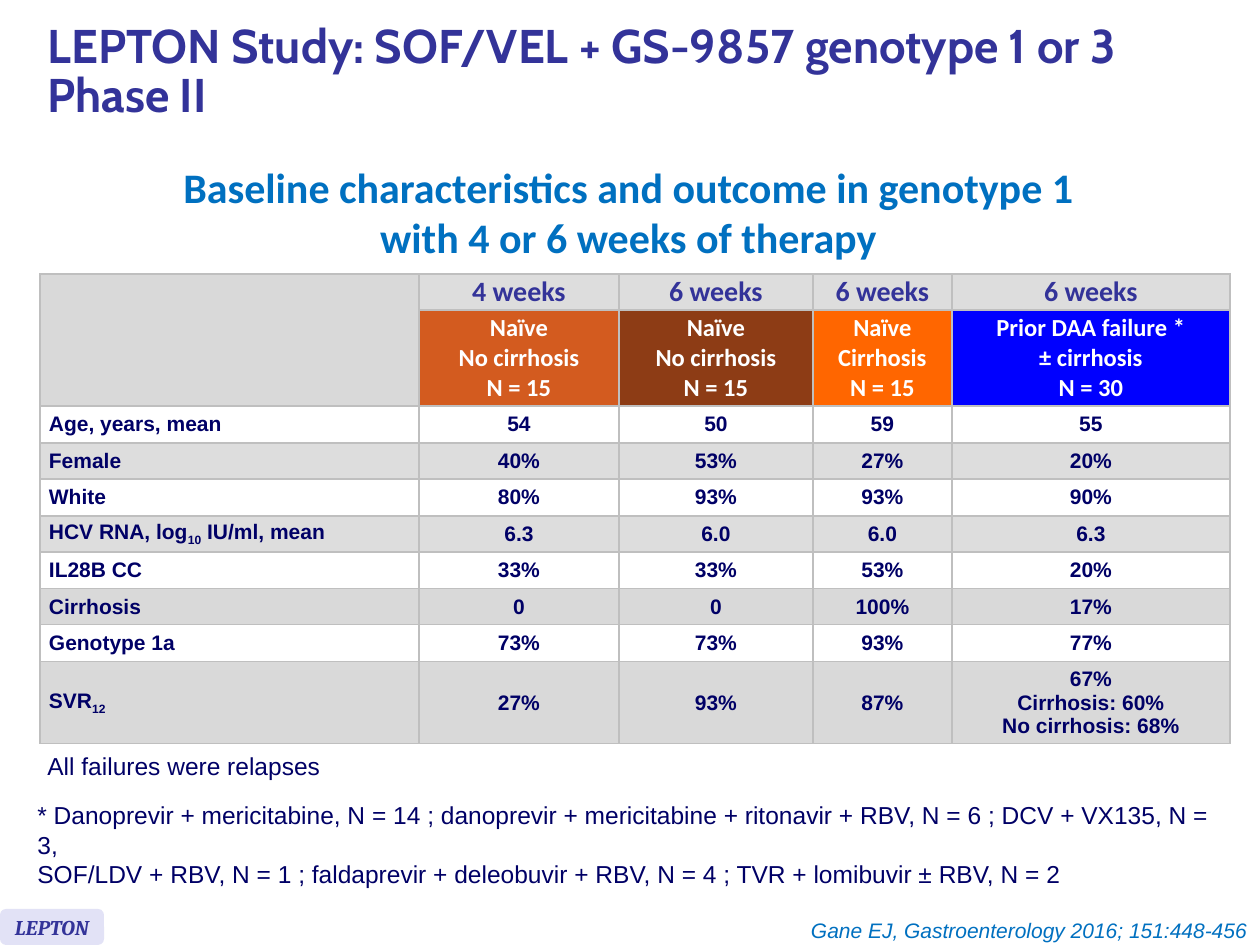
from lxml.etree import SubElement
from pptx import Presentation
from pptx.dml.color import RGBColor
from pptx.enum.shapes import MSO_SHAPE as Shape
from pptx.enum.text import MSO_ANCHOR as Anchor, MSO_AUTO_SIZE as AutoSize, PP_ALIGN as Align
from pptx.oxml.ns import qn
from pptx.util import Pt

EMU_PER_PX = 914400 / 126
COLORS = {
    "indigo": "333399", "navy": "000066", "sky": "0070C0", "white": "FFFFFF",
    "lilac": "E2E2F6", "border": "BFBFBF", "grey": "D9D9D9", "pale": "DDDDDD",
    "rust": "D35B1F", "brown": "8D3C15", "orange": "FF6600", "blue": "0000FF",
}
ARMS = [
    ("4 weeks", ["Naïve", "No cirrhosis", "N = 15"], "rust"),
    ("6 weeks", ["Naïve", "No cirrhosis", "N = 15"], "brown"),
    ("6 weeks", ["Naïve", "Cirrhosis", "N = 15"], "orange"),
    ("6 weeks", ["Prior DAA failure *", "± cirrhosis", "N = 30"], "blue"),
]
# Text between underscores is set as subscript.
CHARACTERISTICS = [
    ("white", "Age, years, mean", "54", "50", "59", "55"),
    ("pale", "Female", "40%", "53%", "27%", "20%"),
    ("white", "White", "80%", "93%", "93%", "90%"),
    ("pale", "HCV RNA, log_10_ IU/ml, mean", "6.3", "6.0", "6.0", "6.3"),
    ("white", "IL28B CC", "33%", "33%", "53%", "20%"),
    ("grey", "Cirrhosis", "0", "0", "100%", "17%"),
    ("white", "Genotype 1a", "73%", "73%", "93%", "77%"),
    ("grey", "SVR_12_", "27%", "93%", "87%", "67%\nCirrhosis: 60%\nNo cirrhosis: 68%"),
]
COLUMN_WIDTHS = [379, 200, 194, 139, 278]
ROW_HEIGHTS = [36, 96, 37, 36, 37, 36, 37, 36, 37, 82]


def px(length):
    return round(length * EMU_PER_PX)


def rgb(color):
    return RGBColor.from_string(COLORS[color])


def write(frame, lines, font, size, color, align=Align.LEFT, bold=False, italic=False):
    """Fill a text frame with one paragraph per line, subscripts between underscores."""
    for index, line in enumerate(lines):
        paragraph = frame.add_paragraph() if index else frame.paragraphs[0]
        paragraph.alignment = align
        for part, text in enumerate(line.split("_")):
            if not text:
                continue
            run = paragraph.add_run()
            run.text = text
            run.font.name, run.font.size = font, Pt(size)
            run.font.bold, run.font.italic = bold, italic
            run.font.color.rgb = rgb(color)
            if part % 2:
                run.font.size = Pt(size)
                run._r.get_or_add_rPr().set("baseline", "-25000")


def add_label(slide, box, lines, *style, wrap=False, **options):
    label = slide.shapes.add_textbox(*map(px, box))
    label.text_frame.word_wrap = wrap
    write(label.text_frame, lines, *style, **options)


def set_title(slide, box, text):
    title = slide.shapes.title
    title.left, title.top, title.width, title.height = map(px, box)
    frame = title.text_frame
    frame.auto_size = AutoSize.NONE
    frame.vertical_anchor = Anchor.MIDDLE
    write(frame, [text], "Cabin", 27, "indigo", bold=True)
    frame.paragraphs[0].line_spacing = 0.85


def style_cell(cell, fill, margin):
    """Apply borders, fill, side margins and middle anchoring."""
    properties = cell._tc.get_or_add_tcPr()
    for side in ("a:lnL", "a:lnR", "a:lnT", "a:lnB"):
        border = SubElement(properties, qn(side), w=str(Pt(1)))
        SubElement(SubElement(border, qn("a:solidFill")), qn("a:srgbClr"), val=COLORS["border"])
    cell.fill.solid()
    cell.fill.fore_color.rgb = rgb(fill)
    cell.margin_left = cell.margin_right = px(margin)
    cell.margin_top = cell.margin_bottom = 0
    cell.vertical_anchor = Anchor.MIDDLE


def add_baseline_table(slide, left, top):
    size = (sum(COLUMN_WIDTHS), sum(ROW_HEIGHTS))
    table = slide.shapes.add_table(len(ROW_HEIGHTS), len(COLUMN_WIDTHS),
                                   *map(px, (left, top, *size))).table
    table.first_row = table.horz_banding = False
    for column, width in zip(table.columns, COLUMN_WIDTHS):
        column.width = px(width)
    for row, height in zip(table.rows, ROW_HEIGHTS):
        row.height = px(height)

    for row in range(2):
        style_cell(table.cell(row, 0), "grey", 13)
    table.cell(0, 0).merge(table.cell(1, 0))
    for column, (duration, population, fill) in enumerate(ARMS, 1):
        duration_cell, population_cell = table.cell(0, column), table.cell(1, column)
        style_cell(duration_cell, "pale", 13)
        write(duration_cell.text_frame, [duration], "Calibri", 16, "indigo", Align.CENTER, True)
        style_cell(population_cell, fill, 13)
        write(population_cell.text_frame, population, "Calibri", 14, "white", Align.CENTER, True)

    for row, (fill, *values) in enumerate(CHARACTERISTICS, 2):
        for column, value in enumerate(values):
            cell = table.cell(row, column)
            style_cell(cell, fill, 9)
            align = Align.CENTER if column else Align.LEFT
            write(cell.text_frame, value.split("\n"), "Arial", 12, "navy", align, True)


def add_study_badge(slide, box, text):
    badge = slide.shapes.add_shape(Shape.ROUNDED_RECTANGLE, *map(px, box))
    badge.shadow.inherit = False
    badge.fill.solid()
    badge.fill.fore_color.rgb = rgb("lilac")
    badge.line.fill.background()
    badge.text_frame.word_wrap = False
    badge.text_frame.vertical_anchor = Anchor.MIDDLE
    write(badge.text_frame, [text], "Cambria", 12, "indigo", Align.CENTER, True, True)


def build_slide(presentation):
    slide = presentation.slides.add_slide(presentation.slide_layouts[5])
    set_title(slide, (35, 6, 1225, 135),
              "LEPTON Study: SOF/VEL + GS-9857 genotype 1 or 3 Phase II")
    add_baseline_table(slide, 40, 274)
    add_label(slide, (165, 155, 927, 115),
              ["Baseline characteristics and outcome in genotype 1", "with 4 or 6 weeks of therapy"],
              "Calibri", 24, "sky", align=Align.CENTER, bold=True)
    add_label(slide, (35, 745, 300, 43), ["All failures were relapses"], "Arial", 14, "navy")
    add_label(slide, (25, 794, 1218, 72),
              ["* Danoprevir + mericitabine, N = 14 ; danoprevir + mericitabine + ritonavir + RBV, "
               "N = 6 ; DCV + VX135, N = 3,",
               "SOF/LDV + RBV, N = 1 ; faldaprevir + deleobuvir + RBV, N = 4 ; "
               "TVR + lomibuvir ± RBV, N = 2"],
              "Arial", 14, "navy", wrap=True)
    add_study_badge(slide, (0, 909, 104, 36), "LEPTON")
    add_label(slide, (789, 911, 471, 38), ["Gane EJ, Gastroenterology 2016; 151:448-456"],
              "Arial", 12, "sky", align=Align.RIGHT, italic=True)


def main():
    presentation = Presentation()
    presentation.slide_width, presentation.slide_height = px(1260), px(945)
    build_slide(presentation)
    presentation.save("out.pptx")


if __name__ == "__main__":
    main()
